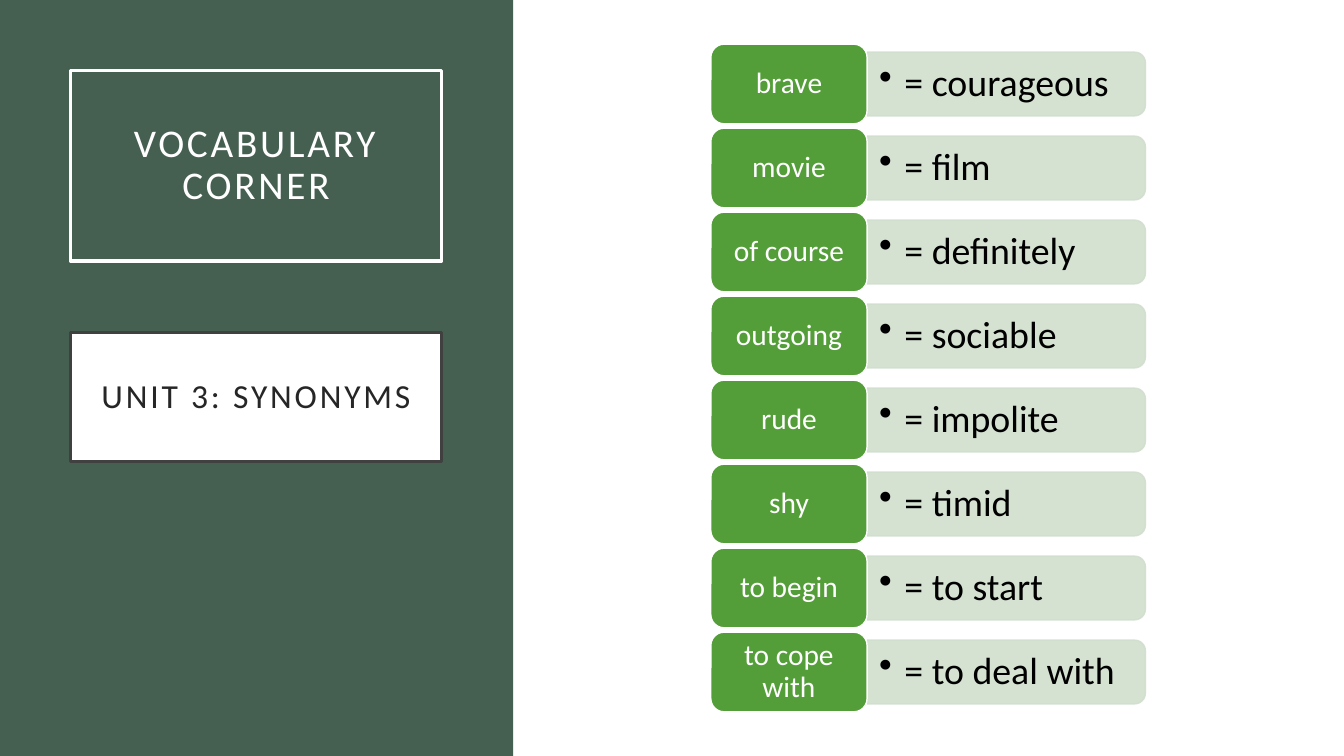
from lxml.etree import SubElement
from pptx import Presentation
from pptx.dml.color import RGBColor
from pptx.enum.shapes import MSO_SHAPE as Shape
from pptx.enum.text import MSO_ANCHOR as Anchor, PP_ALIGN as Align
from pptx.oxml.ns import qn
from pptx.util import Inches, Pt

# Content
TITLE = "VOCABULARY CORNER"
SUBTITLE = "UNIT 3: SYNONYMS"
SYNONYMS = [
    ("brave", "courageous"),
    ("movie", "film"),
    ("of course", "definitely"),
    ("outgoing", "sociable"),
    ("rude", "impolite"),
    ("shy", "timid"),
    ("to begin", "to start"),
    ("to cope with", "to deal with"),
]

COLORS = {
    "panel": "455F51", "white": "FFFFFF", "frame": "404040", "subtitle": "262626",
    "word": "549E39", "synonym": "D1DFCE", "black": "000000",
}
FONT = "Calibri"

# Grid, in inches
WIDTH, HEIGHT = 13.33, 7.5
PANEL_WIDTH = 5.09
BOX_LEFT, BOX_WIDTH = 0.7, 3.68
ROW_PITCH = HEIGHT / (len(SYNONYMS) + 1)
WORD_LEFT, WORD_WIDTH, WORD_HEIGHT = 7.05, 1.55, 0.79
BAR_LEFT, BAR_WIDTH = WORD_LEFT + WORD_WIDTH, 2.76
BAR_HEIGHT = WORD_HEIGHT * 0.8
BULLET_INDENT = 0.25


def rgb(name):
    return RGBColor.from_string(COLORS[name])


def add_box(kind, left, top, width, height, fill=None, line=None, line_width=1):
    shape = slide.shapes.add_shape(
        kind, Inches(left), Inches(top), Inches(width), Inches(height))
    shape.shadow.inherit = False
    if fill:
        shape.fill.solid()
        shape.fill.fore_color.rgb = rgb(fill)
    else:
        shape.fill.background()
    if line:
        shape.line.color.rgb = rgb(line)
        shape.line.width = Pt(line_width)
    else:
        shape.line.fill.background()
    return shape


def write(shape, text, size, color, inset, align=Align.CENTER, spacing=0, bullet=False):
    frame = shape.text_frame
    frame.word_wrap = True
    frame.vertical_anchor = Anchor.MIDDLE
    frame.margin_left = frame.margin_right = Inches(inset[0])
    frame.margin_top = frame.margin_bottom = Inches(inset[1])
    paragraph = frame.paragraphs[0]
    paragraph.alignment = align
    paragraph.line_spacing = 0.9
    run = paragraph.add_run()
    run.text = text
    run.font.name = FONT
    run.font.size = Pt(size)
    run.font.color.rgb = rgb(color)
    if spacing:
        run.font._element.set("spc", str(spacing * 100))
    if bullet:
        properties = paragraph._p.get_or_add_pPr()
        properties.set("marL", str(Inches(BULLET_INDENT)))
        properties.set("indent", str(-Inches(BULLET_INDENT)))
        SubElement(properties, qn("a:buChar"), char="•")


def set_opacity(shape, percent):
    for color in shape._element.spPr.iter(qn("a:srgbClr")):
        SubElement(color, qn("a:alpha"), val=str(percent * 1000))


presentation = Presentation()
presentation.slide_width = Inches(WIDTH)
presentation.slide_height = Inches(HEIGHT)
slide = presentation.slides.add_slide(presentation.slide_layouts[6])

# Left panel with title and subtitle
add_box(Shape.RECTANGLE, 0, 0, PANEL_WIDTH, HEIGHT, fill="panel")
title = add_box(Shape.RECTANGLE, BOX_LEFT, 0.7, BOX_WIDTH, 1.89,
                line="white", line_width=2.5)
write(title, TITLE, size=28, color="white", inset=(0.2, 0.2), spacing=2)
subtitle = add_box(Shape.RECTANGLE, BOX_LEFT, 3.3, BOX_WIDTH, 1.28,
                   fill="white", line="frame", line_width=2.5)
write(subtitle, SUBTITLE, size=24, color="subtitle", inset=(0.2, 0.2), spacing=2)

# One row per word: a bar turned on its side, its text, and the word tile
for row, (word, synonym) in enumerate(SYNONYMS, start=1):
    middle = row * ROW_PITCH
    bar = add_box(Shape.ROUND_2_SAME_RECTANGLE,
                  BAR_LEFT + (BAR_WIDTH - BAR_HEIGHT) / 2, middle - BAR_WIDTH / 2,
                  BAR_HEIGHT, BAR_WIDTH, fill="synonym", line="synonym")
    bar.rotation = 90
    set_opacity(bar, 90)

    text_height = BAR_HEIGHT * 0.9
    text_box = slide.shapes.add_textbox(
        Inches(BAR_LEFT), Inches(middle - text_height / 2),
        Inches(BAR_WIDTH), Inches(text_height))
    write(text_box, f"= {synonym}", size=27, color="black", inset=(0.12, 0.06),
          align=Align.LEFT, bullet=True)

    tile = add_box(Shape.ROUNDED_RECTANGLE, WORD_LEFT, middle - WORD_HEIGHT / 2,
                   WORD_WIDTH, WORD_HEIGHT, fill="word", line="white")
    write(tile, word, size=21, color="white", inset=(0.09, 0.04))

presentation.save("out.pptx")
